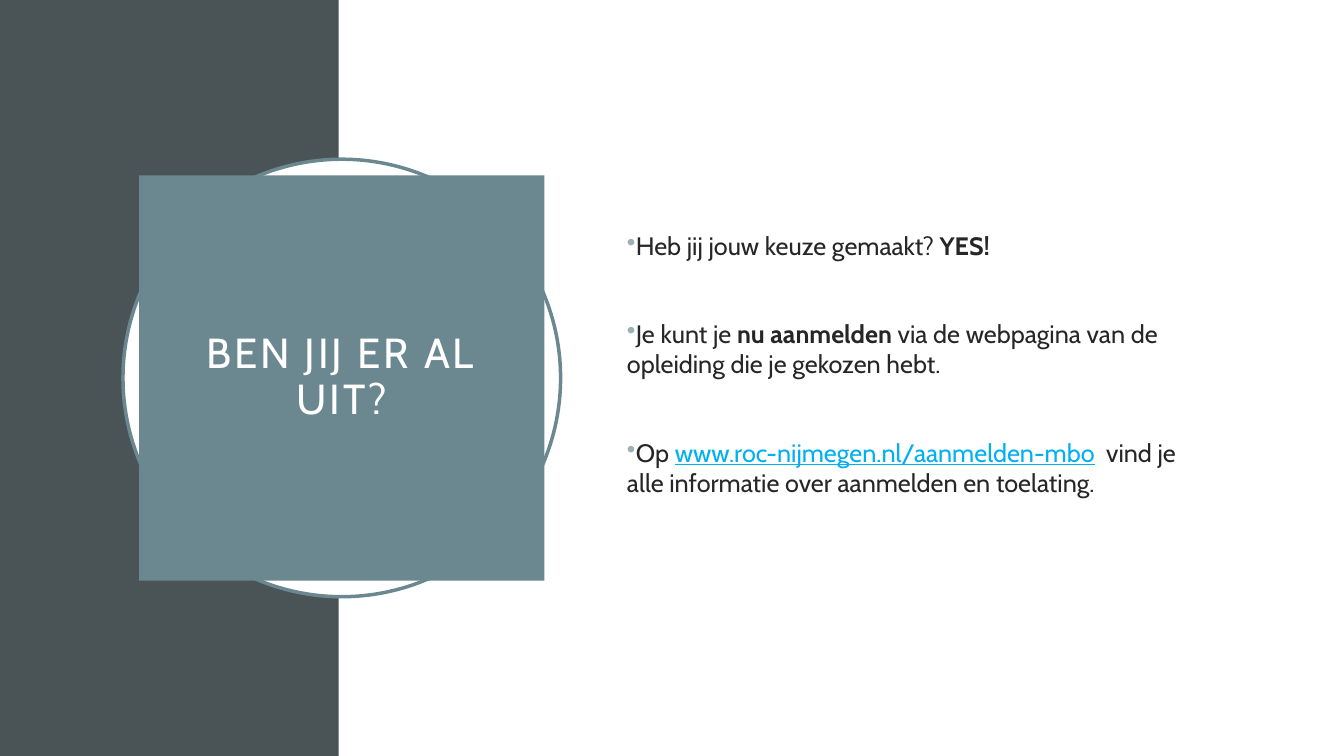
from dataclasses import dataclass

from lxml import etree
from pptx import Presentation
from pptx.dml.color import RGBColor
from pptx.enum.shapes import MSO_SHAPE
from pptx.enum.text import MSO_ANCHOR, PP_ALIGN
from pptx.oxml.ns import qn
from pptx.util import Inches, Pt

RECTANGLE, OVAL = MSO_SHAPE.RECTANGLE, MSO_SHAPE.OVAL
MIDDLE, CENTER = MSO_ANCHOR.MIDDLE, PP_ALIGN.CENTER


@dataclass(frozen=True)
class Theme:
    font: str = "Cabin"
    dark: RGBColor = RGBColor(0x4A, 0x53, 0x56)
    accent: RGBColor = RGBColor(0x6B, 0x88, 0x91)
    bullet: str = "9BAFB5"
    white: RGBColor = RGBColor(0xFF, 0xFF, 0xFF)
    ink: RGBColor = RGBColor(0x26, 0x26, 0x26)
    link: RGBColor = RGBColor(0x00, 0xB0, 0xF0)
    title_size: Pt = Pt(30)
    body_size: Pt = Pt(18)
    ring_width: Pt = Pt(2.5)
    step_gap: Pt = Pt(41.5)


THEME = Theme()
TITLE = "BEN JIJ ER AL UIT?"
# Each step is a list of (text, style) pieces
STEPS = [
    [("Heb jij jouw keuze gemaakt? ", ""), ("YES!", "bold")],
    [("Je kunt je ", ""), ("nu aanmelden ", "bold"),
     ("via de webpagina van de opleiding die je gekozen hebt.", "")],
    [("Op ", ""), ("www.roc-nijmegen.nl/aanmelden-mbo", "link"),
     ("  vind je alle informatie over aanmelden en toelating.", "")],
]


def add_panel(slide, kind, left, top, width, height, fill, line=None):
    panel = slide.shapes.add_shape(
        kind, Inches(left), Inches(top), Inches(width), Inches(height))
    panel.shadow.inherit = False
    panel.fill.solid()
    panel.fill.fore_color.rgb = fill
    if line is None:
        panel.line.fill.background()
    else:
        panel.line.color.rgb = line
        panel.line.width = THEME.ring_width
    return panel


def set_font(font, size, color):
    font.name = THEME.font
    font.size = size
    font.color.rgb = color


def add_bullet(paragraph):
    properties = paragraph._p.get_or_add_pPr()
    properties.set("marL", "0")
    properties.set("indent", str(-Inches(0.25)))
    color = etree.SubElement(properties, qn("a:buClr"))
    etree.SubElement(color, qn("a:srgbClr"), val=THEME.bullet)
    etree.SubElement(properties, qn("a:buChar"), char="•")


def draw_title_badge(slide, left, top, size):
    # Ring behind, square label centred on it
    add_panel(slide, OVAL, left, top, size, size, THEME.white, THEME.accent)
    margin = 0.16
    side = size - 2 * margin
    label = add_panel(slide, RECTANGLE, left + margin, top + margin,
                      side, side, THEME.accent)
    frame = label.text_frame
    frame.word_wrap = True
    frame.vertical_anchor = MIDDLE
    frame.margin_left = frame.margin_right = Inches(0.4)
    heading = frame.paragraphs[0]
    heading.alignment = CENTER
    heading.line_spacing = 0.9
    run = heading.add_run()
    run.text = TITLE
    set_font(heading.font, THEME.title_size, THEME.white)
    set_font(run.font, THEME.title_size, THEME.white)
    run.font._element.set("spc", "200")


def draw_steps(slide, left, top, width, height):
    box = slide.shapes.add_textbox(
        Inches(left), Inches(top), Inches(width), Inches(height))
    frame = box.text_frame
    frame.word_wrap = True
    frame.vertical_anchor = MIDDLE
    frame.margin_bottom = Inches(0.32)
    for index, pieces in enumerate(STEPS):
        step = frame.paragraphs[0] if index == 0 else frame.add_paragraph()
        add_bullet(step)
        if index:
            step.space_before = THEME.step_gap
        for text, style in pieces:
            run = step.add_run()
            run.text = text
            set_font(run.font, THEME.body_size,
                     THEME.link if style == "link" else THEME.ink)
            if style == "bold":
                run.font.bold = True
            elif style == "link":
                run.font.underline = True


def main():
    deck = Presentation()
    deck.slide_width, deck.slide_height = Inches(13.33), Inches(7.5)
    slide = deck.slides.add_slide(deck.slide_layouts[6])
    # Dark side band, then the two content regions
    add_panel(slide, RECTANGLE, 0, 0, 3.36, 7.5, THEME.dark)
    draw_title_badge(slide, 1.22, 1.58, 4.34)
    draw_steps(slide, 6.12, 1.53, 5.82, 4.43)
    deck.save("out.pptx")


if __name__ == "__main__":
    main()
